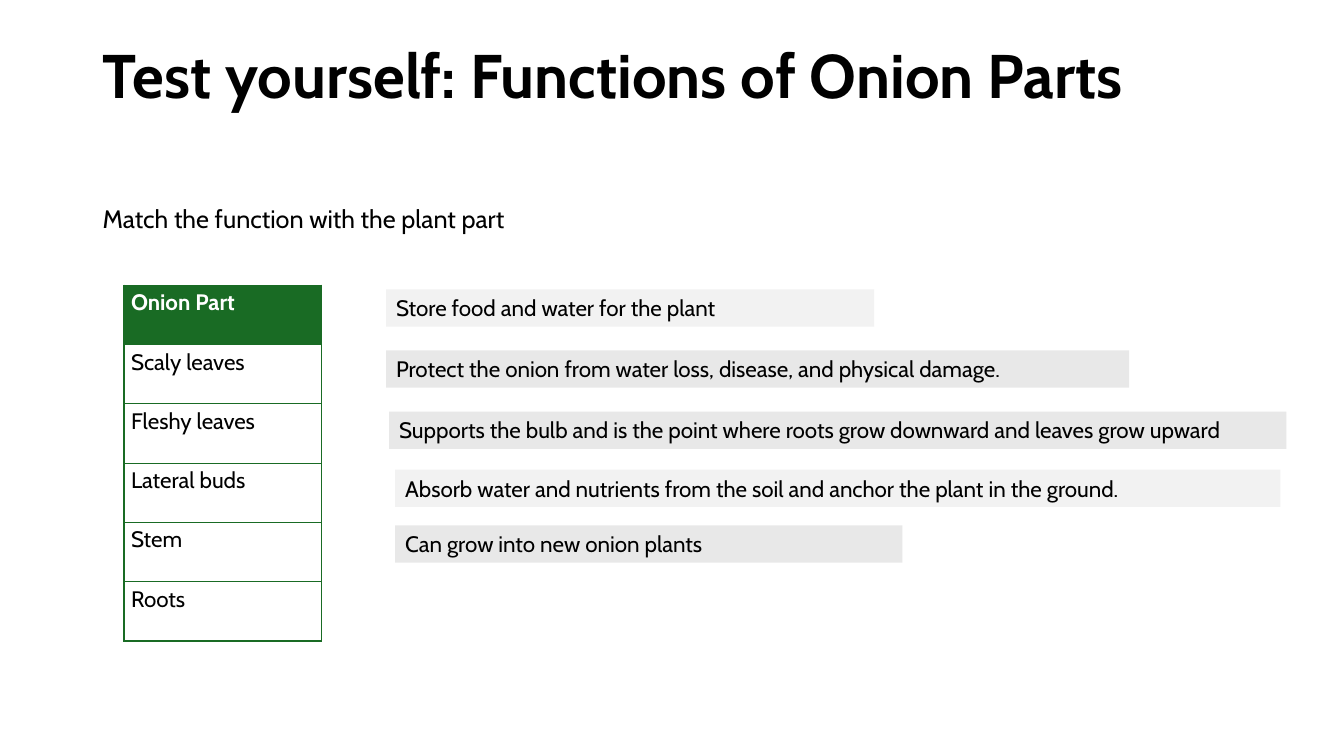
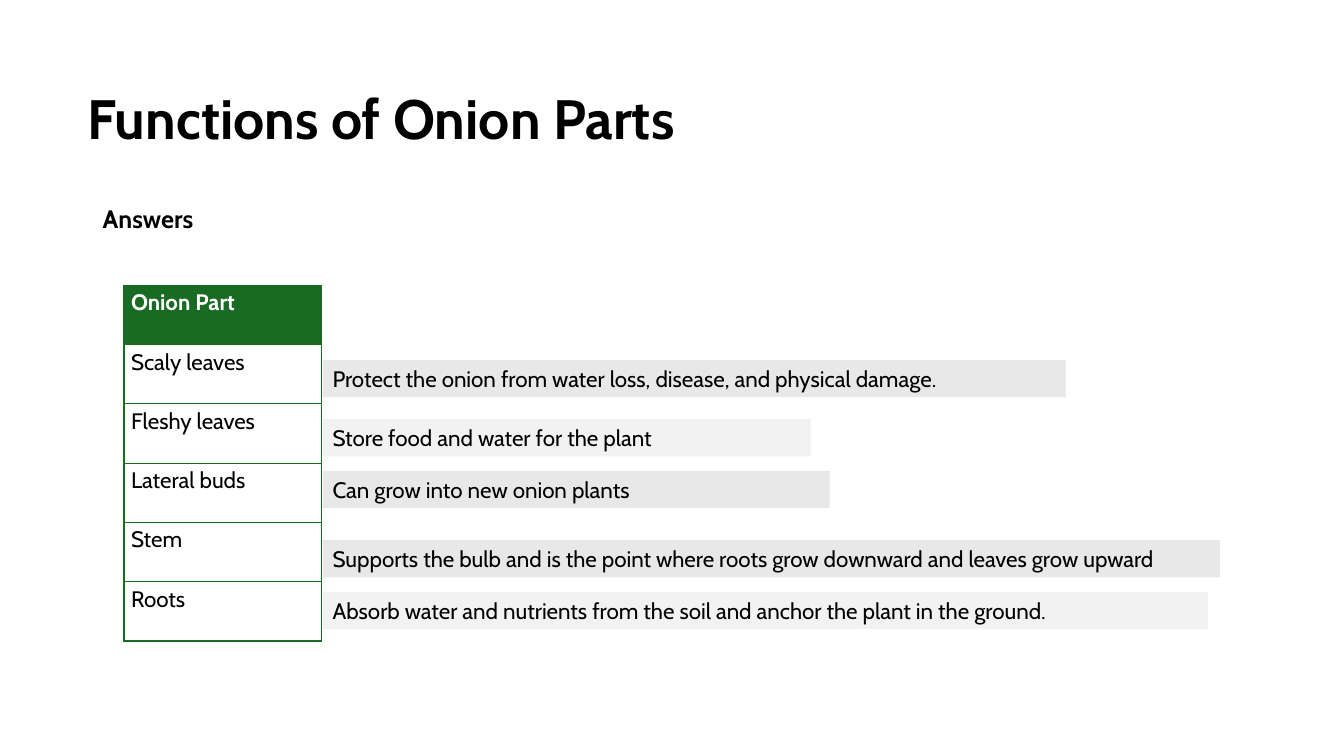
from dataclasses import dataclass

from lxml import etree
from pptx import Presentation
from pptx.dml.color import RGBColor
from pptx.enum.shapes import MSO_SHAPE
from pptx.enum.text import MSO_ANCHOR, PP_ALIGN
from pptx.oxml.ns import qn
from pptx.slide import Slide
from pptx.table import _Cell
from pptx.text.text import TextFrame
from pptx.util import Inches, Pt

RECTANGLE = MSO_SHAPE.RECTANGLE
TOP = MSO_ANCHOR.TOP
MIDDLE = MSO_ANCHOR.MIDDLE
LEFT = PP_ALIGN.LEFT

COLORS = {
    "text": "000000",
    "header_text": "FFFFFF",
    "green": "196B24",
    "light": "F2F2F2",
    "gray": "E8E8E8",
}
FONT = "Cabin"
SLIDE_WIDTH, SLIDE_HEIGHT = 13.33, 7.5
MARGIN = 0.92
TITLE_WIDTH = 11.5
SUBTITLE_TOP, SUBTITLE_HEIGHT = 2, 0.52
TABLE_LEFT, TABLE_TOP, TABLE_WIDTH, TABLE_HEIGHT = 1.23, 2.83, 1.96, 3.53
PARTS = ["Onion Part", "Scaly leaves", "Fleshy leaves", "Lateral buds", "Stem", "Roots"]
ROW_HEIGHT = TABLE_HEIGHT / len(PARTS)
STRIP_HEIGHT = 0.37


@dataclass(frozen=True)
class TextStyle:
    size: float
    bold: bool = False
    color: str = "text"
    line_spacing: float = 1.0


@dataclass(frozen=True)
class Box:
    left: float
    top: float
    width: float
    height: float


@dataclass(frozen=True)
class Function:
    text: str
    width: float
    fill: str


@dataclass(frozen=True)
class Strip:
    function: Function
    gap: float
    row: float


@dataclass(frozen=True)
class Page:
    title: str
    title_box: Box
    title_size: float
    title_anchor: MSO_ANCHOR
    subtitle: str
    subtitle_width: float
    subtitle_bold: bool
    strips: list[Strip]


STORE = Function("Store food and water for the plant", 4.84, "light")
PROTECT = Function(
    "Protect the onion from water loss, disease, and physical damage.", 7.37, "gray"
)
SUPPORT = Function(
    "Supports the bulb and is the point where roots grow downward and leaves grow upward",
    8.9,
    "gray",
)
ABSORB = Function(
    "Absorb water and nutrients from the soil and anchor the plant in the ground.",
    8.78,
    "light",
)
GROW = Function("Can grow into new onion plants", 5.03, "gray")

PAGES = [
    Page(
        "Test yourself: Functions of Onion Parts",
        Box(MARGIN, 0.4, TITLE_WIDTH, 1.45),
        44,
        TOP,
        "Match the function with the plant part",
        8.78,
        False,
        [
            Strip(STORE, 0.64, 0.07),
            Strip(PROTECT, 0.64, 1.1),
            Strip(SUPPORT, 0.67, 2.13),
            Strip(ABSORB, 0.73, 3.11),
            Strip(GROW, 0.73, 4.05),
        ],
    ),
    Page(
        "Functions of Onion Parts",
        Box(0.77, 0.75, TITLE_WIDTH, 0.92),
        39.6,
        MIDDLE,
        "Answers",
        1.49,
        True,
        [
            Strip(PROTECT, 0.01, 1.26),
            Strip(STORE, 0.01, 2.26),
            Strip(GROW, 0.01, 3.13),
            Strip(SUPPORT, 0.01, 4.3),
            Strip(ABSORB, 0.01, 5.17),
        ],
    ),
]


def rgb(name: str) -> RGBColor:
    return RGBColor.from_string(COLORS[name])


def inches(box: Box) -> tuple[int, int, int, int]:
    return Inches(box.left), Inches(box.top), Inches(box.width), Inches(box.height)


def write(frame: TextFrame, text: str, style: TextStyle) -> None:
    frame.text = text
    paragraph = frame.paragraphs[0]
    paragraph.alignment = LEFT
    paragraph.line_spacing = style.line_spacing
    for run in paragraph.runs:
        run.font.name = FONT
        run.font.size = Pt(style.size)
        run.font.bold = style.bold
        run.font.color.rgb = rgb(style.color)


def add_text(
    slide: Slide, box: Box, text: str, style: TextStyle, anchor: MSO_ANCHOR = TOP
) -> None:
    frame = slide.shapes.add_textbox(*inches(box)).text_frame
    frame.word_wrap = True
    frame.vertical_anchor = anchor
    write(frame, text, style)


def add_strip(slide: Slide, strip: Strip) -> None:
    function = strip.function
    box = Box(
        TABLE_LEFT + TABLE_WIDTH + strip.gap,
        TABLE_TOP + strip.row * ROW_HEIGHT,
        function.width,
        STRIP_HEIGHT,
    )
    shape = slide.shapes.add_shape(RECTANGLE, *inches(box))
    shape.shadow.inherit = False
    shape.fill.solid()
    shape.fill.fore_color.rgb = rgb(function.fill)
    shape.line.fill.background()
    shape.text_frame.word_wrap = True
    shape.text_frame.vertical_anchor = TOP
    write(shape.text_frame, function.text, TextStyle(16))


def add_borders(cell: _Cell) -> None:
    properties = cell._tc.get_or_add_tcPr()
    for side in ("a:lnL", "a:lnR", "a:lnT", "a:lnB"):
        line = etree.SubElement(properties, qn(side), w=str(Pt(1)))
        fill = etree.SubElement(line, qn("a:solidFill"))
        etree.SubElement(fill, qn("a:srgbClr"), val=COLORS["green"])


def add_parts_table(slide: Slide) -> None:
    box = Box(TABLE_LEFT, TABLE_TOP, TABLE_WIDTH, TABLE_HEIGHT)
    table = slide.shapes.add_table(len(PARTS), 1, *inches(box)).table
    table.horz_banding = False
    for index, part in enumerate(PARTS):
        is_header = index == 0
        cell = table.cell(index, 0)
        cell.margin_left = cell.margin_right = Inches(0.07)
        cell.margin_top = cell.margin_bottom = 0
        add_borders(cell)
        if is_header:
            cell.fill.solid()
            cell.fill.fore_color.rgb = rgb("green")
        else:
            cell.fill.background()
        color = "header_text" if is_header else "text"
        write(cell.text_frame, part, TextStyle(16, is_header, color, 1.15))
        cell.text_frame.paragraphs[0].space_after = Pt(6)


def add_page(presentation: Presentation, page: Page) -> None:
    slide = presentation.slides.add_slide(presentation.slide_layouts[6])
    title_style = TextStyle(page.title_size, True, line_spacing=0.9)
    add_text(slide, page.title_box, page.title, title_style, page.title_anchor)
    subtitle_box = Box(MARGIN, SUBTITLE_TOP, page.subtitle_width, SUBTITLE_HEIGHT)
    subtitle_style = TextStyle(18, page.subtitle_bold, line_spacing=0.9)
    add_text(slide, subtitle_box, page.subtitle, subtitle_style)
    for strip in page.strips:
        add_strip(slide, strip)
    add_parts_table(slide)


def main() -> None:
    presentation = Presentation()
    presentation.slide_width = Inches(SLIDE_WIDTH)
    presentation.slide_height = Inches(SLIDE_HEIGHT)
    for page in PAGES:
        add_page(presentation, page)
    presentation.save("out.pptx")


if __name__ == "__main__":
    main()
